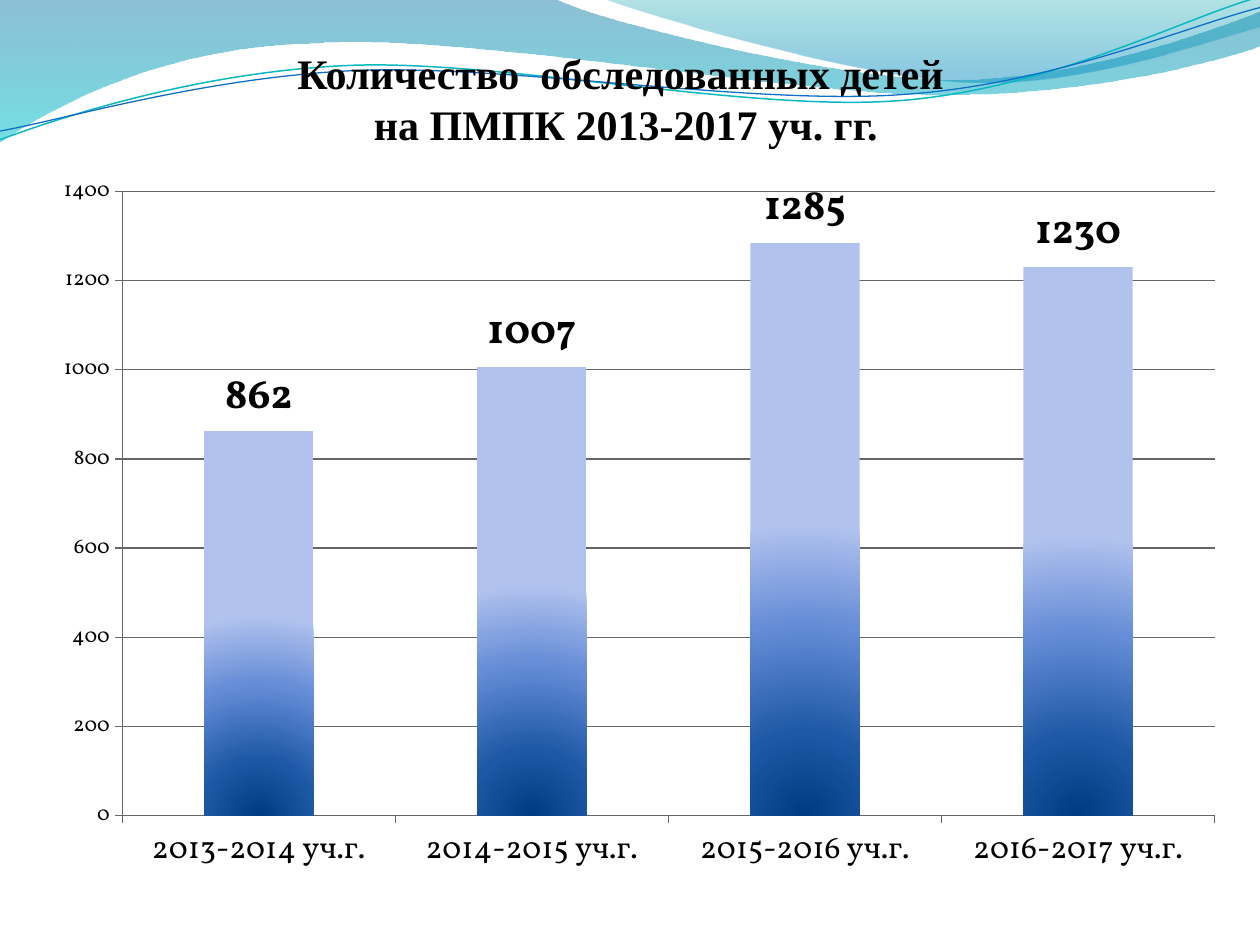
from lxml.etree import SubElement
from pptx import Presentation
from pptx.chart.data import CategoryChartData
from pptx.dml.color import RGBColor
from pptx.enum.chart import XL_CHART_TYPE, XL_LABEL_POSITION, XL_TICK_MARK
from pptx.enum.text import MSO_ANCHOR, MSO_AUTO_SIZE, PP_ALIGN
from pptx.oxml import parse_xml
from pptx.oxml.ns import nsdecls, qn
from pptx.util import Inches, Pt

COLORS = {
    "text": "000000", "axis": "666666",
    "steel": "0074A1", "cyan": "00C6CF", "teal": "00A1A9", "blue": "008BBF",
    "teal_line": "0AB8BF", "blue_line": "0F6FC6",
    "bar_dark": "003A80", "bar_deep": "1D58A5", "bar_mid": "668DD7", "bar_light": "B1C2EE",
}
COLUMNS, ROWS = 100, 75


def color(name):
    """Return the named palette colour."""
    return RGBColor.from_string(COLORS[name])


class WaveSlide:
    """Style and current slide, measured in a grid of columns and rows."""

    def __init__(self, presentation):
        """Add a slide with a title placeholder."""
        self.column = presentation.slide_width / COLUMNS
        self.row = presentation.slide_height / ROWS
        self.slide = presentation.slides.add_slide(presentation.slide_layouts[5])

    def place(self, left, top, width, height):
        """Turn grid units into lengths."""
        return (round(left * self.column), round(top * self.row),
                round(width * self.column), round(height * self.row))

    def freeform(self, start, segments, closed):
        """Draw lines (one point) and cubic curves (three points) from a start."""
        points = [start] + [point for segment in segments for point in segment]
        scaled = [(round(x * self.column), round(y * self.row)) for x, y in points]
        builder = self.slide.shapes.build_freeform(*scaled[0])
        builder.add_line_segments(scaled[1:], close=closed)
        shape = builder.convert_to_shape()
        shape.shadow.inherit = False
        steps = iter(list(shape._element.spPr.iter(qn("a:lnTo"))))
        for segment in segments:
            first, *others = [next(steps) for _ in segment]
            if others:
                curve = first.makeelement(qn("a:cubicBezTo"))
                first.addprevious(curve)
                for step in (first, *others):
                    curve.append(step[0])
                    step.getparent().remove(step)
        return shape

    def wave(self, start, segments, stops):
        """Draw a wave filled from top to bottom with transparent colours."""
        shape = self.freeform(start, segments, True)
        shape.line.fill.background()
        shape.fill.gradient()
        shape.fill.gradient_angle = 270
        for stop, (position, name, _) in zip(shape.fill.gradient_stops, stops):
            stop.position = position
            stop.color.rgb = color(name)
        for element, (_, _, opacity) in zip(shape._element.spPr.iter(qn("a:srgbClr")), stops):
            SubElement(element, qn("a:alpha"), val=str(opacity * 1000))

    def curve(self, start, segments, name, width):
        """Draw an open curved line."""
        shape = self.freeform(start, segments, False)
        shape.fill.background()
        shape.line.color.rgb = color(name)
        shape.line.width = Pt(width)

    def title(self, lines, box):
        """Fill the title placeholder and bring it to the front."""
        shape = self.slide.shapes.title
        shape.left, shape.top, shape.width, shape.height = self.place(*box)
        text_frame = shape.text_frame
        text_frame.text = "\n".join(lines)
        text_frame.word_wrap = True
        text_frame.auto_size = MSO_AUTO_SIZE.NONE
        text_frame.vertical_anchor = MSO_ANCHOR.TOP
        for paragraph in text_frame.paragraphs:
            paragraph.alignment = PP_ALIGN.CENTER
            paragraph._p.get_or_add_pPr().set("indent", str(Inches(0.49)))
            for run in paragraph.runs:
                run.font.name = "Times New Roman"
                run.font.size = Pt(24)
                run.font.bold = True
                run.font.color.rgb = color("text")
        self.slide.shapes._spTree.append(shape._element)

    def column_chart(self, values, box, plot):
        """Add a column chart with value labels and radial bar fills."""
        data = CategoryChartData()
        data.categories = list(values)
        data.add_series("Series 1", list(values.values()))
        chart = self.slide.shapes.add_chart(
            XL_CHART_TYPE.COLUMN_CLUSTERED, *self.place(*box), data).chart
        chart.has_legend = False
        chart.has_title = False
        chart.font.name = "Vollkorn"
        chart.font.size = Pt(18)
        chart.font.color.rgb = color("text")
        self.axes(chart)
        column_plot = chart.plots[0]
        column_plot.vary_by_categories = False
        column_plot.gap_width = 150
        series = column_plot.series[0]
        labels = series.data_labels
        labels.show_value = True
        labels.position = XL_LABEL_POSITION.OUTSIDE_END
        labels.font.size = Pt(24)
        labels.font.bold = True
        self.radial_fill(series)
        self.plot_layout(chart, plot)

    def axes(self, chart):
        """Style both axes and the gridlines."""
        value_axis = chart.value_axis
        value_axis.minimum_scale, value_axis.maximum_scale = 0, 1400
        value_axis.major_unit = 200
        value_axis.tick_labels.font.size = Pt(12)
        value_axis.has_major_gridlines = True
        for axis in (value_axis, chart.category_axis):
            axis.major_tick_mark = XL_TICK_MARK.OUTSIDE
        for item in (value_axis, chart.category_axis, value_axis.major_gridlines):
            item.format.line.color.rgb = color("axis")
            item.format.line.width = Pt(0.75)

    def radial_fill(self, series):
        """Shade the bars outward from the middle of their base."""
        stops = ((0, "bar_dark"), (28, "bar_deep"), (66, "bar_mid"), (100, "bar_light"))
        stop_xml = "".join(
            f'<a:gs pos="{position * 1000}"><a:srgbClr val="{COLORS[name]}"/></a:gs>'
            for position, name in stops)
        series.format.line.fill.background()
        series._element.get_or_add_spPr().insert(0, parse_xml(
            f'<a:gradFill {nsdecls("a")} rotWithShape="1"><a:gsLst>{stop_xml}</a:gsLst>'
            '<a:path path="circle"><a:fillToRect l="50000" t="100000" r="50000" b="0"/>'
            '</a:path></a:gradFill>'))

    def plot_layout(self, chart, plot):
        """Fix the inner plot area as shares of the chart."""
        sides = "".join(f'<c:{side} val="{share}"/>' for side, share in zip("xywh", plot))
        plot_area = chart._chartSpace.chart.plotArea
        for layout in plot_area.findall(qn("c:layout")):
            plot_area.remove(layout)
        plot_area.insert(0, parse_xml(
            f'<c:layout {nsdecls("c")}><c:manualLayout><c:layoutTarget val="inner"/>'
            f'<c:xMode val="edge"/><c:yMode val="edge"/>{sides}</c:manualLayout></c:layout>'))


def main():
    """Build and save the slide."""
    presentation = Presentation()
    presentation.slide_width, presentation.slide_height = Inches(10), Inches(7.5)
    page = WaveSlide(presentation)
    page.wave((0, 0), (
        ((44, -0.1),),
        ((47.6, 1.7), (66.4, 6.3), (75.8, 6.3)), ((85.3, 6.3), (95.8, 2.6), (100, 0.9)),
        ((100.1, 3.6),),
        ((98.3, 4.4), (87, 7.6), (74.6, 7.5)), ((62.2, 7.5), (38.2, 2.8), (25.7, 3.4)),
        ((12.9, 3.6), (4.6, 8.3), (-0.1, 11.3))),
        ((0, "steel", 45), (1, "cyan", 55)))
    page.wave((47.9, -0.1), (
        ((50.9, 1.1), (68.2, 6.2), (76.9, 6.5)), ((85.6, 6.9), (96.1, 3.2), (100, 2.1)),
        ((100, 0),)),
        ((0, "teal", 30), (0.8, "blue", 45)))
    page.curve((0, 11.1), (
        ((4.8, 9.3), (15.8, 5.7), (27.7, 5.2)), ((39.5, 4.7), (59.3, 8.9), (71.3, 8)),
        ((83.3, 7.1), (93.8, 1.5), (99.8, -0.2))),
        "teal_line", 0.85)
    page.curve((0, 10.4), (
        ((4.7, 9.6), (16.4, 6.1), (28.3, 5.6)), ((40.3, 5.1), (59.7, 8.4), (71.7, 7.5)),
        ((83.6, 6.7), (94.1, 2.1), (100, 0.6))),
        "blue_line", 0.75)
    page.column_chart(
        {"2013-2014 уч.г.": 862, "2014-2015 уч.г.": 1007,
         "2015-2016 уч.г.": 1285, "2016-2017 уч.г.": 1230},
        (0, 13.33, 100, 60), (0.097, 0.031, 0.867, 0.826))
    page.title(("Количество  обследованных детей", " на ПМПК 2013-2017 уч. гг."),
               (4.2, 3.3, 85.2, 9.1))
    presentation.save("out.pptx")


if __name__ == "__main__":
    main()
